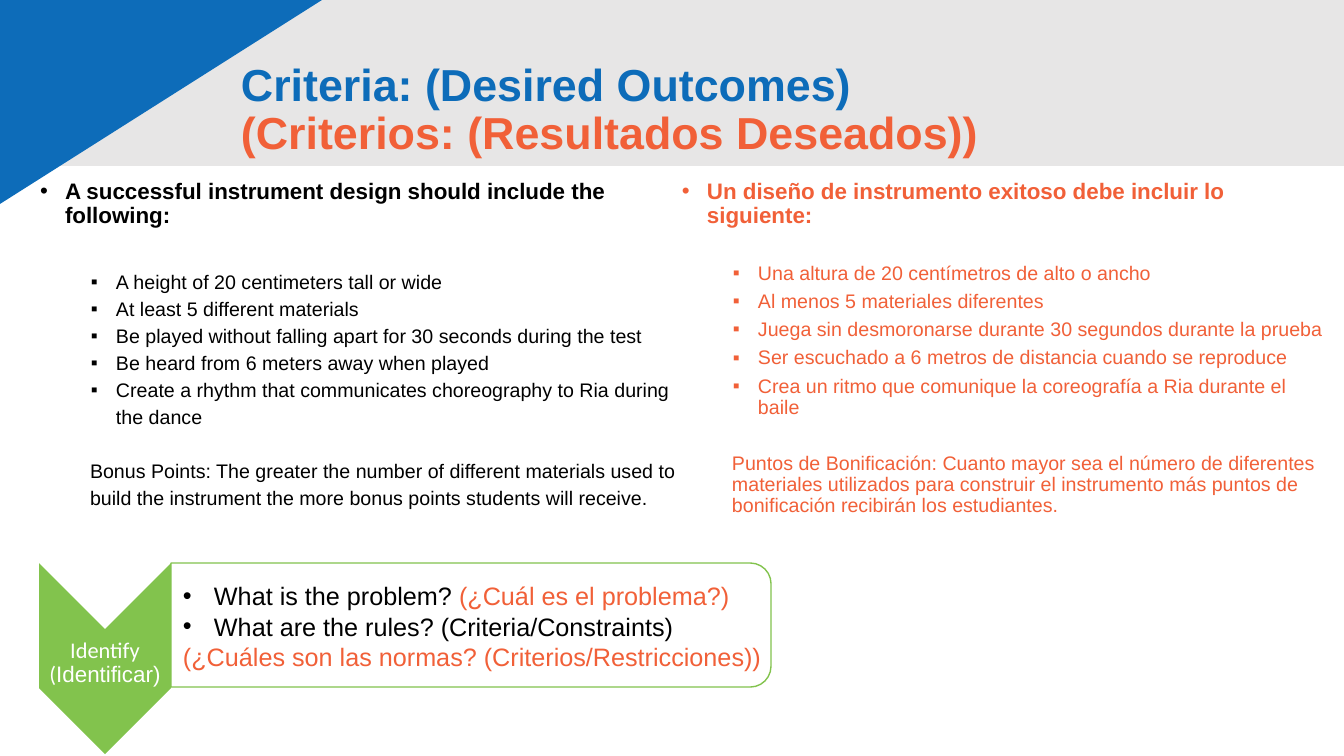
from dataclasses import dataclass

from lxml.etree import SubElement
from pptx import Presentation
from pptx.dml.color import RGBColor
from pptx.enum.shapes import MSO_SHAPE
from pptx.enum.text import MSO_ANCHOR, PP_ALIGN
from pptx.oxml.ns import qn
from pptx.util import Emu, Pt

SLIDE_W, SLIDE_H = 1344, 756
EMU_PER_PX = 12192000 / SLIDE_W


@dataclass(frozen=True)
class Theme:
    blue: str = "0D6CB9"
    orange: str = "F16038"
    green: str = "82C34D"
    grey: str = "E7E6E6"
    black: str = "000000"
    white: str = "FFFFFF"
    font: str = "Arial"
    label_font: str = "Calibri"
    title: int = 32
    question: int = 18
    heading: int = 16
    item: int = 14


THEME = Theme()


def px(length):
    return Emu(round(length * EMU_PER_PX))


def write(frame, text, *, color=THEME.black, size=THEME.item, bold=False, font=THEME.font,
          bullet=None, margin=0, hanging=0, spacing=1.0, before=0,
          align=PP_ALIGN.LEFT, paragraph=None):
    """Write a new paragraph, or one more run when a paragraph is given."""
    if paragraph is None:
        first = frame.paragraphs[0]
        paragraph = frame.add_paragraph() if first.runs else first
        properties = paragraph._p.get_or_add_pPr()
        properties.set("marL", str(px(margin)))
        properties.set("indent", str(px(-hanging)))
        if bullet:
            SubElement(properties, qn("a:buFont")).set("typeface", THEME.font)
            SubElement(properties, qn("a:buChar")).set("char", bullet)
        else:
            SubElement(properties, qn("a:buNone"))
        paragraph.alignment = align
        paragraph.line_spacing = spacing
        paragraph.space_before = Pt(before)
    run = paragraph.add_run()
    run.text = text
    run.font.name = font
    run.font.size = Pt(size)
    run.font.bold = bold
    run.font.color.rgb = RGBColor.from_string(color)
    return paragraph


class SlideBuilder:
    def __init__(self, slide, theme):
        self.slide = slide
        self.theme = theme

    def shape(self, preset, left, top, width, height, fill, line=None, quarter_turn=False):
        """Draw a preset shape in the box it covers, turned by 90 degrees if asked."""
        if quarter_turn:
            shift = (width - height) / 2
            left, top, width, height = left + shift, top - shift, height, width
        shape = self.slide.shapes.add_shape(preset, px(left), px(top), px(width), px(height))
        shape.rotation = 90 if quarter_turn else 0
        shape.shadow.inherit = False
        shape.fill.solid()
        shape.fill.fore_color.rgb = RGBColor.from_string(fill)
        if line:
            shape.line.color.rgb = RGBColor.from_string(line)
            shape.line.width = Pt(1)
        else:
            shape.line.fill.background()

    def text_area(self, left, top, width, height, anchor=MSO_ANCHOR.MIDDLE, insets=(10, 5, 10, 5)):
        frame = self.slide.shapes.add_textbox(px(left), px(top), px(width), px(height)).text_frame
        frame.word_wrap = True
        frame.vertical_anchor = anchor
        (frame.margin_left, frame.margin_top,
         frame.margin_right, frame.margin_bottom) = map(px, insets)
        return frame

    def criteria(self, left, color, heading, items, bonus, spacing, item_gap, list_gap, bonus_gap):
        column = self.text_area(left, 175, 662, 380, MSO_ANCHOR.TOP)
        write(column, heading, color=color, size=self.theme.heading, bold=True,
              bullet="•", margin=25, hanging=25, spacing=0.9)
        for index, item in enumerate(items):
            write(column, item, color=color, bullet="▪", margin=76, hanging=25,
                  spacing=spacing, before=item_gap if index else list_gap)
        write(column, bonus, color=color, margin=50, spacing=spacing, before=bonus_gap)


def main():
    deck = Presentation()
    deck.slide_width, deck.slide_height = px(SLIDE_W), px(SLIDE_H)
    builder = SlideBuilder(deck.slides.add_slide(deck.slide_layouts[6]), THEME)

    # Header band and corner
    builder.shape(MSO_SHAPE.RECTANGLE, 0, 0, SLIDE_W, 166, THEME.grey)
    builder.shape(MSO_SHAPE.RIGHT_TRIANGLE, 0, 0, 322, 204, THEME.blue, quarter_turn=True)

    # Title
    title = builder.text_area(231, 38, 978, 146)
    for text, color in (("Criteria: (Desired Outcomes)", THEME.blue),
                        ("(Criterios: (Resultados Deseados))", THEME.orange)):
        write(title, text, color=color, size=THEME.title, bold=True, spacing=0.9)

    # Criteria in English
    builder.criteria(
        30, THEME.black, "A successful instrument design should include the following:",
        ["A height of 20 centimeters tall or wide",
         "At least 5 different materials",
         "Be played without falling apart for 30 seconds during the test",
         "Be heard from 6 meters away when played",
         "Create a rhythm that communicates choreography to Ria during the dance"],
        "Bonus Points: The greater the number of different materials used to build "
        "the instrument the more bonus points students will receive.",
        spacing=1.15, item_gap=0, list_gap=27, bonus_gap=19)

    # Criteria in Spanish
    builder.criteria(
        672, THEME.orange, "Un diseño de instrumento exitoso debe incluir lo siguiente:",
        ["Una altura de 20 centímetros de alto o ancho",
         "Al menos 5 materiales diferentes",
         "Juega sin desmoronarse durante 30 segundos durante la prueba",
         "Ser escuchado a 6 metros de distancia cuando se reproduce",
         "Crea un ritmo que comunique la coreografía a Ria durante el baile"],
        "Puntos de Bonificación: Cuanto mayor sea el número de diferentes materiales "
        "utilizados para construir el instrumento más puntos de bonificación recibirán "
        "los estudiantes.",
        spacing=0.9, item_gap=5, list_gap=25, bonus_gap=25)

    # Identify step
    builder.shape(MSO_SHAPE.CHEVRON, 39, 563, 132, 191, THEME.green, quarter_turn=True)
    step = builder.text_area(39, 635, 132, 57, insets=(1, 1, 1, 1))
    identify = write(step, "Identify (", color=THEME.white, size=THEME.heading,
                     font=THEME.label_font, spacing=0.9, align=PP_ALIGN.CENTER)
    write(step, "Identificar)", color=THEME.white, size=THEME.heading, paragraph=identify)

    # Questions of the step
    builder.shape(MSO_SHAPE.ROUND_2_SAME_RECTANGLE, 171, 563, 600, 124, THEME.white,
                  line=THEME.green, quarter_turn=True)
    questions = builder.text_area(171, 570, 600, 112, insets=(12, 1, 1, 1))
    bulleted = dict(size=THEME.question, bullet="•", margin=31, hanging=31)
    problem = write(questions, "What is the problem? ", **bulleted)
    write(questions, "(¿Cuál es el problema?)", color=THEME.orange,
          size=THEME.question, paragraph=problem)
    write(questions, "What are the rules? (Criteria/Constraints)", **bulleted)
    write(questions, "(¿Cuáles son las normas? (Criterios/Restricciones))",
          color=THEME.orange, size=THEME.question)

    deck.save("out.pptx")


if __name__ == "__main__":
    main()
